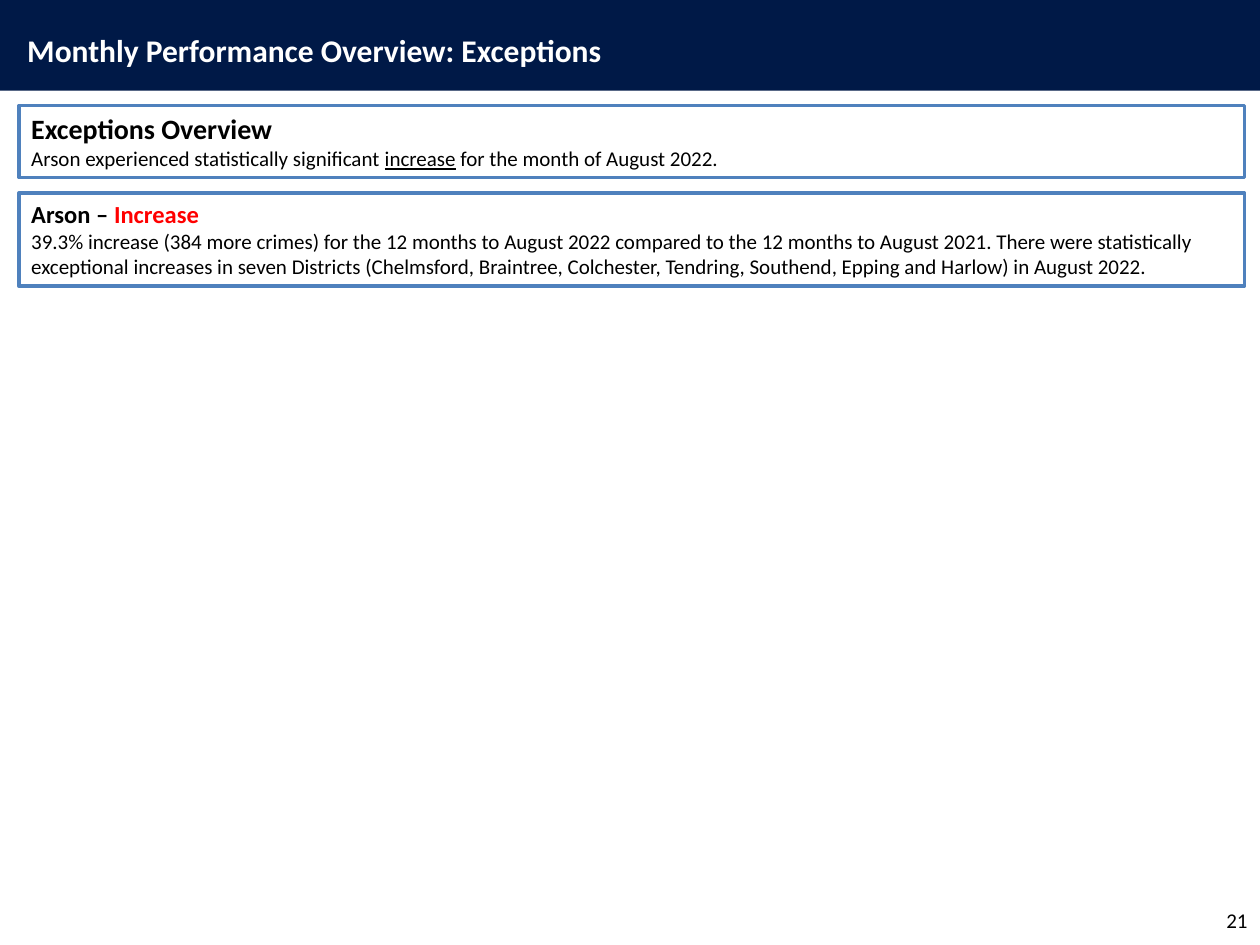
from pptx import Presentation
from pptx.dml.color import RGBColor
from pptx.enum.shapes import MSO_SHAPE
from pptx.enum.text import MSO_ANCHOR, PP_ALIGN
from pptx.util import Cm, Pt

HUES = {
    "navy": "001947",
    "blue": "4F81BD",
    "white": "FFFFFF",
    "black": "000000",
    "red": "FF0000",
}


def hue(name):
    return RGBColor.from_string(HUES[name])


def write(para, text, size=12, color="black", bold=False, under=False, align=PP_ALIGN.LEFT):
    para.alignment = align
    run = para.add_run()
    run.text = text
    font = run.font
    font.name = "Calibri"
    font.size = Pt(size)
    font.bold = bold
    font.underline = under
    font.color.rgb = hue(color)


deck = Presentation()
deck.slide_width = Cm(25.4)
deck.slide_height = Cm(19.05)
slide = deck.slides.add_slide(deck.slide_layouts[6])
shapes = slide.shapes

band = shapes.add_shape(MSO_SHAPE.RECTANGLE, Cm(0), Cm(-0.08), Cm(25.4), Cm(1.91))
band.shadow.inherit = False
band.fill.solid()
band.fill.fore_color.rgb = hue("navy")
band.line.fill.background()

title = shapes.add_textbox(Cm(0.3), Cm(0.51), Cm(14.4), Cm(1.02)).text_frame
title.word_wrap = True
write(title.paragraphs[0], "Monthly Performance Overview: Exceptions",
      size=18, color="white", bold=True)

page = shapes.add_textbox(Cm(19.48), Cm(18.03), Cm(5.92), Cm(1.02)).text_frame
page.word_wrap = True
page.vertical_anchor = MSO_ANCHOR.MIDDLE
write(page.paragraphs[0], "21", align=PP_ALIGN.RIGHT)

panels = [
    (2.13, 1.45, [
        [("Exceptions Overview", {"size": 16, "bold": True})],
        [("Arson experienced statistically significant ", {}),
         ("increase", {"under": True}),
         (" for the month of August 2022.", {})],
    ]),
    (3.89, 1.88, [
        [("Arson – ", {"size": 14, "bold": True}),
         ("Increase", {"size": 14, "bold": True, "color": "red"})],
        [("39.3% increase (384 more crimes) for the 12 months to August 2022 "
          "compared to the 12 months to August 2021. There were statistically "
          "exceptional increases in seven Districts (Chelmsford, Braintree, "
          "Colchester, Tendring, Southend, Epping and Harlow) in August 2022.", {})],
    ]),
]

for top, height, lines in panels:
    box = shapes.add_shape(MSO_SHAPE.RECTANGLE, Cm(0.38), Cm(top), Cm(24.71), Cm(height))
    box.shadow.inherit = False
    box.fill.solid()
    box.fill.fore_color.rgb = hue("white")
    box.line.color.rgb = hue("blue")
    box.line.width = Pt(2)
    frame = box.text_frame
    frame.word_wrap = True
    frame.vertical_anchor = MSO_ANCHOR.TOP
    for spot, line in enumerate(lines):
        para = frame.add_paragraph() if spot else frame.paragraphs[0]
        for text, style in line:
            write(para, text, **style)

deck.save("out.pptx")
